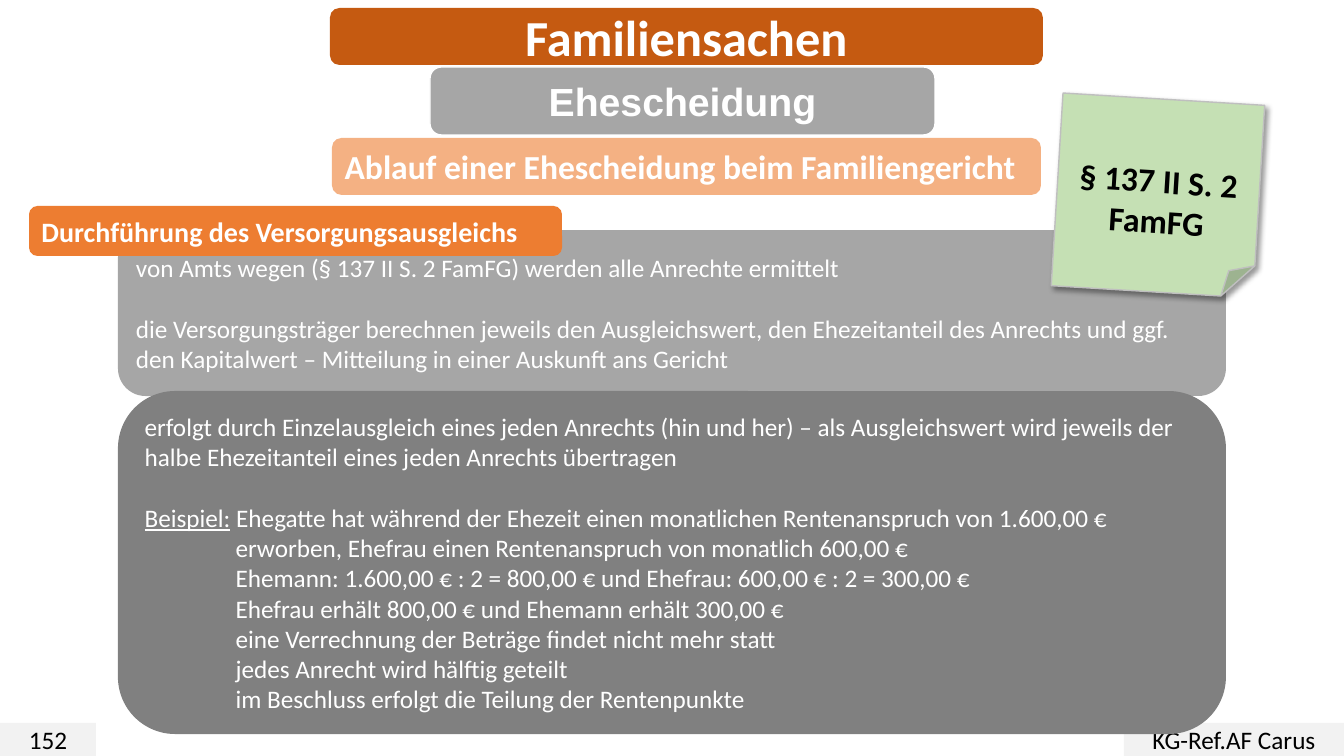
from lxml import etree
from pptx import Presentation
from pptx.dml.color import RGBColor
from pptx.enum.shapes import MSO_SHAPE
from pptx.enum.text import MSO_ANCHOR, PP_ALIGN
from pptx.oxml.ns import qn
from pptx.util import Emu, Pt

# Content: a line is (indented, gap above, [(text, underlined), ...])
COLORS = {
    "title": "C55A11", "topic": "A6A6A6", "subtopic": "F4B183",
    "step": "ED7D31", "example": "808080", "footer": "F2F2F2",
    "note": "C5E0B4", "note_edge": "BFBFBF", "white": "FFFFFF", "black": "000000",
}


def plain(text, indented=False, gap=False):
    return indented, gap, [(text, False)]


PENSION_LINES = [
    plain("von Amts wegen (§ 137 II S. 2 FamFG) werden alle Anrechte ermittelt"),
    plain("die Versorgungsträger berechnen jeweils den Ausgleichswert, den Ehezeitanteil "
          "des Anrechts und ggf. den Kapitalwert – Mitteilung in einer Auskunft ans Gericht",
          gap=True),
]
EXAMPLE_DETAILS = [
    "erworben, Ehefrau einen Rentenanspruch von monatlich 600,00 €",
    "Ehemann: 1.600,00 € : 2 = 800,00 € und Ehefrau: 600,00 € : 2 = 300,00 €",
    "Ehefrau erhält 800,00 € und Ehemann erhält 300,00 €",
    "eine Verrechnung der Beträge findet nicht mehr statt",
    "jedes Anrecht wird hälftig geteilt",
    "im Beschluss erfolgt die Teilung der Rentenpunkte",
]
EXAMPLE_LINES = [
    plain("erfolgt durch Einzelausgleich eines jeden Anrechts (hin und her) – als "
          "Ausgleichswert wird jeweils der halbe Ehezeitanteil eines jeden Anrechts übertragen"),
    (False, True, [("Beispiel:", True),
                   (" Ehegatte hat während der Ehezeit einen monatlichen "
                    "Rentenanspruch von 1.600,00 €", False)]),
    *[plain(detail, indented=True) for detail in EXAMPLE_DETAILS],
]

# Boxes from back to front: place in px, fill, lines, size, and what differs
ROUND, RECT = MSO_SHAPE.ROUNDED_RECTANGLE, MSO_SHAPE.RECTANGLE
BOXES = [
    (ROUND, (330, 8, 713, 57), "title", [plain("Familiensachen")], 36,
     dict(bold=True, centered=True)),
    (RECT, (0, 723, 96, 33), "footer", [plain("152")], 18,
     dict(ink="black", centered=True)),
    (RECT, (1124, 723, 220, 33), "footer", [plain("KG-Ref.AF Carus")], 18,
     dict(ink="black", centered=True)),
    (ROUND, (430, 67, 505, 68), "topic", [plain("Ehescheidung")], 28,
     dict(bold=True, centered=True, font="Arial", edge="white")),
    (ROUND, (332, 138, 709, 57), "subtopic",
     [plain("Ablauf einer Ehescheidung beim Familiengericht")], 24, dict(bold=True)),
    (ROUND, (118, 230, 1108, 166), "topic", PENSION_LINES, 18, {}),
    (ROUND, (29, 206, 533, 50), "step",
     [plain("Durchführung des Versorgungsausgleichs")], 20, dict(bold=True)),
    (ROUND, (118, 391, 1108, 343), "example", EXAMPLE_LINES, 18, {}),
]
NOTE = (MSO_SHAPE.FOLDED_CORNER, (1057, 99, 202, 193), "note",
        [plain("§ 137 II S. 2"), plain("FamFG")], 24,
        dict(bold=True, centered=True, ink="black", edge="note_edge"))
NOTE_TURN, NOTE_TOP_INSET = 3.5, 46
EXAMPLE_INDENT, GAP_PT = 91, 22
SLIDE_W, SLIDE_H = 1344, 756


def px(length):
    return Emu(round(length * 914400 / 100.8))


def color(name):
    return RGBColor.from_string(COLORS[name])


def add_box(slide, kind, place, fill, lines, size, ink="white", edge=None,
            font="Calibri", bold=False, centered=False):
    box = slide.shapes.add_shape(kind, *map(px, place))
    box.shadow.inherit = False
    box.fill.solid()
    box.fill.fore_color.rgb = color(fill)
    if edge:
        box.line.color.rgb = color(edge)
        box.line.width = Pt(1)
    else:
        box.line.fill.background()

    frame = box.text_frame
    frame.word_wrap = True
    frame.vertical_anchor = MSO_ANCHOR.MIDDLE
    for number, (indented, gap, pieces) in enumerate(lines):
        line = frame.add_paragraph() if number else frame.paragraphs[0]
        line.alignment = PP_ALIGN.CENTER if centered else PP_ALIGN.LEFT
        if gap:
            line.space_before = Pt(GAP_PT)
        if indented:
            line._p.get_or_add_pPr().set("marL", str(px(EXAMPLE_INDENT)))
        for text, underlined in pieces:
            run = line.add_run()
            run.text = text
            run.font.name = font
            run.font.size = Pt(size)
            run.font.bold = bold
            run.font.underline = underlined
            run.font.color.rgb = color(ink)
    return box


def add_drop_shadow(box):
    effects = box._element.spPr.find(qn("a:effectLst"))
    shadow = etree.SubElement(effects, qn("a:outerShdw"), blurRad=str(Pt(4)),
                              dist=str(Pt(3)), dir=str(45 * 60000),
                              algn="tl", rotWithShape="0")
    tone = etree.SubElement(shadow, qn("a:srgbClr"), val=COLORS["black"])
    etree.SubElement(tone, qn("a:alpha"), val="40000")


def main():
    deck = Presentation()
    deck.slide_width, deck.slide_height = px(SLIDE_W), px(SLIDE_H)
    slide = deck.slides.add_slide(deck.slide_layouts[6])

    # Headings, footer and text panels
    for kind, place, fill, lines, size, style in BOXES:
        add_box(slide, kind, place, fill, lines, size, **style)

    # Tilted sticky note
    *note_parts, note_style = NOTE
    note = add_box(slide, *note_parts, **note_style)
    note.rotation = NOTE_TURN
    note.text_frame.margin_top = px(NOTE_TOP_INSET)
    add_drop_shadow(note)

    deck.save("out.pptx")


if __name__ == "__main__":
    main()
